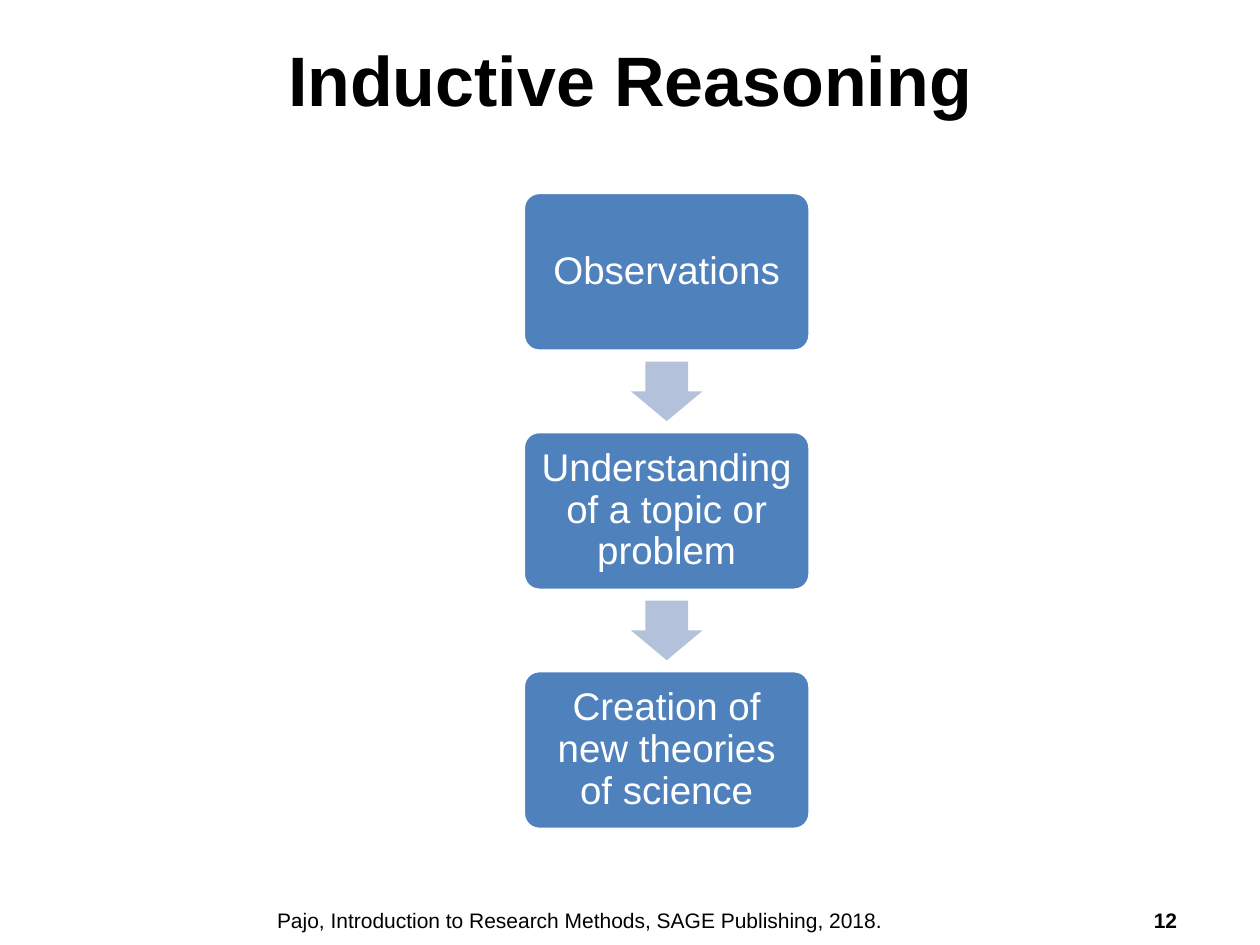
from pptx import Presentation
from pptx.dml.color import RGBColor
from pptx.enum.shapes import MSO_SHAPE
from pptx.enum.text import MSO_ANCHOR, PP_ALIGN
from pptx.util import Cm, Pt

BLACK = RGBColor(0x00, 0x00, 0x00)
WHITE = RGBColor(0xFF, 0xFF, 0xFF)
BLUE = RGBColor(0x4F, 0x81, 0xBD)
PALE_BLUE = RGBColor(0xB3, 0xC1, 0xDB)


def write(sp, text, size=12, color=BLACK, bold=False, spacing=1.0, inset=0.25):
    tf = sp.text_frame
    tf.word_wrap = True
    tf.vertical_anchor = MSO_ANCHOR.MIDDLE
    tf.margin_left = tf.margin_right = Cm(inset)
    p = tf.paragraphs[0]
    p.alignment = PP_ALIGN.CENTER
    p.line_spacing = spacing
    r = p.add_run()
    r.text = text
    r.font.name = "Arial"
    r.font.size = Pt(size)
    r.font.bold = bold
    r.font.color.rgb = color


prs = Presentation()
prs.slide_width, prs.slide_height = Cm(25.4), Cm(19.05)
s = prs.slides.add_slide(prs.slide_layouts[6])

# Title
sp = s.shapes.add_textbox(Cm(1.27), Cm(0), Cm(22.86), Cm(3.18))
write(sp, "Inductive Reasoning", size=40, bold=True)

# Footer and slide number
sp = s.shapes.add_textbox(Cm(1.27), Cm(18.03), Cm(20.96), Cm(1.02))
write(sp, "Pajo, Introduction to Research Methods, SAGE Publishing, 2018. ")
sp = s.shapes.add_textbox(Cm(22.86), Cm(18.03), Cm(1.27), Cm(1.02))
write(sp, "12", bold=True, inset=0)

# Vertical process: boxes at an even pitch, an arrow centred in each gap
steps = [
    "Observations",
    "Understanding of a topic or problem",
    "Creation of new theories of science",
]
center_x, first_top, pitch = 13.44, 3.88, 4.82
box_w, box_h = 5.78, 3.2
arrow_w, arrow_h = 1.2, 1.44  # before the quarter turn

for i, step in enumerate(steps):
    top = first_top + i * pitch
    sp = s.shapes.add_shape(MSO_SHAPE.ROUNDED_RECTANGLE, Cm(center_x - box_w / 2),
                            Cm(top), Cm(box_w), Cm(box_h))
    sp.adjustments[0] = 0.1
    sp.shadow.inherit = False
    sp.fill.solid()
    sp.fill.fore_color.rgb = BLUE
    sp.line.color.rgb = WHITE
    sp.line.width = Pt(2)
    # The rounded corners already narrow the text area a little
    write(sp, step, size=22, color=WHITE, spacing=0.9, inset=0.2)

    if i < len(steps) - 1:
        center_y = top + (box_h + pitch) / 2
        sp = s.shapes.add_shape(MSO_SHAPE.RIGHT_ARROW, Cm(center_x - arrow_w / 2),
                                Cm(center_y - arrow_h / 2), Cm(arrow_w), Cm(arrow_h))
        sp.rotation = 90
        sp.adjustments[0] = 0.6
        sp.adjustments[1] = 0.5
        sp.shadow.inherit = False
        sp.fill.solid()
        sp.fill.fore_color.rgb = PALE_BLUE
        sp.line.fill.background()

prs.save("out.pptx")
